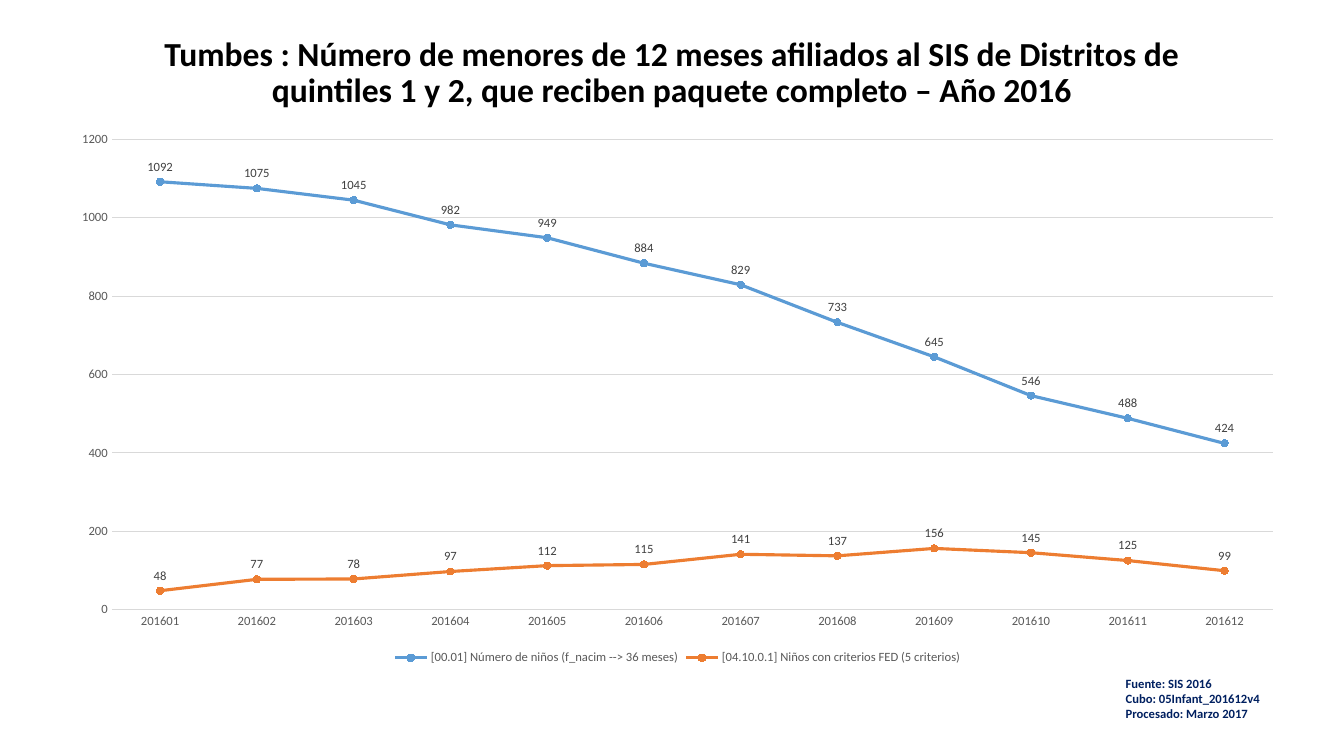
from pptx import Presentation
from pptx import util as u
from pptx.chart.data import CategoryChartData
from pptx.dml.color import RGBColor
from pptx.enum import chart as c
from pptx.enum import text as t

FONT = "Calibri"
GREY, GRID = "595959", "D9D9D9"
TITLE = ("Tumbes : Número de menores de 12 meses afiliados al SIS de Distritos de "
         "quintiles 1 y 2, que reciben paquete completo – Año 2016")
SOURCE_LINES = ["Fuente: SIS 2016", "Cubo: 05Infant_201612v4", "Procesado: Marzo 2017"]
MONTHS = [f"2016{month:02d}" for month in range(1, 13)]
SERIES = [
    ("[00.01] Número de niños (f_nacim --> 36 meses)", "5B9BD5",
     [1092, 1075, 1045, 982, 949, 884, 829, 733, 645, 546, 488, 424]),
    ("[04.10.0.1] Niños con criterios FED (5 criterios)", "ED7D31",
     [48, 77, 78, 97, 112, 115, 141, 137, 156, 145, 125, 99]),
]


def color(hex_string):
    return RGBColor.from_string(hex_string)


def set_values(target, values):
    for name, value in values.items():
        setattr(target, name, value)


def set_font(font, size, hex_string, bold=False):
    set_values(font, {"name": FONT, "size": u.Pt(size), "bold": bold})
    font.color.rgb = color(hex_string)


def set_line(line, width, hex_string):
    line.width = u.Pt(width)
    line.color.rgb = color(hex_string)


def points(box):
    return [u.Pt(length) for length in box]


def place_title(slide, box):
    title = slide.shapes.title
    set_values(title, dict(zip(("left", "top", "width", "height"), points(box))))
    set_values(title.text_frame, {"text": TITLE, "word_wrap": True,
                                  "vertical_anchor": t.MSO_ANCHOR.MIDDLE,
                                  "auto_size": t.MSO_AUTO_SIZE.NONE})
    paragraph = title.text_frame.paragraphs[0]
    set_values(paragraph, {"alignment": t.PP_ALIGN.CENTER, "line_spacing": 0.9})
    set_font(paragraph.runs[0].font, 24, "000000", bold=True)


def add_source(slide, box):
    frame = slide.shapes.add_textbox(*points(box)).text_frame
    set_values(frame, {"text": "\n".join(SOURCE_LINES), "word_wrap": True})
    for paragraph in frame.paragraphs:
        set_font(paragraph.runs[0].font, 9, "002060", bold=True)


def format_axes(chart):
    for axis in (chart.category_axis, chart.value_axis):
        set_values(axis, {"major_tick_mark": c.XL_TICK_MARK.NONE,
                          "minor_tick_mark": c.XL_TICK_MARK.NONE})
        set_font(axis.tick_labels.font, 9, GREY)
    set_line(chart.category_axis.format.line, 0.75, GRID)
    value_axis = chart.value_axis
    set_values(value_axis, {"minimum_scale": 0, "maximum_scale": 1200, "major_unit": 200})
    value_axis.format.line.fill.background()
    set_line(value_axis.major_gridlines.format.line, 0.75, GRID)


def format_series(series, hex_string):
    series.smooth = False
    set_line(series.format.line, 2.25, hex_string)
    marker = series.marker
    set_values(marker, {"style": c.XL_MARKER_STYLE.CIRCLE, "size": 5})
    marker.format.fill.solid()
    marker.format.fill.fore_color.rgb = color(hex_string)
    set_line(marker.format.line, 0.75, hex_string)
    labels = series.data_labels
    set_values(labels, {"show_value": True, "position": c.XL_LABEL_POSITION.ABOVE,
                        "number_format": "0", "number_format_is_linked": False})
    set_font(labels.font, 9, "404040")


def add_line_chart(slide, box):
    data = CategoryChartData(number_format="0")
    data.categories = MONTHS
    for name, _, values in SERIES:
        data.add_series(name, values)
    chart = slide.shapes.add_chart(c.XL_CHART_TYPE.LINE_MARKERS, *points(box), data).chart
    set_values(chart, {"has_title": False, "has_legend": True})
    set_font(chart.font, 10, "000000")
    set_values(chart.legend, {"position": c.XL_LEGEND_POSITION.BOTTOM,
                              "include_in_layout": False})
    set_font(chart.legend.font, 9, GREY)
    chart.plots[0].vary_by_categories = False
    format_axes(chart)
    for series, (_, hex_string, _) in zip(chart.plots[0].series, SERIES):
        format_series(series, hex_string)


def main():
    presentation = Presentation()
    set_values(presentation, {"slide_width": u.Pt(960), "slide_height": u.Pt(540)})
    slide = presentation.slides.add_slide(presentation.slide_layouts[5])
    place_title(slide, (66, 29, 828, 47.5))
    add_source(slide, (797, 479, 163, 61))
    add_line_chart(slide, (41, 86.5, 886, 391.5))
    presentation.save("out.pptx")


if __name__ == "__main__":
    main()
